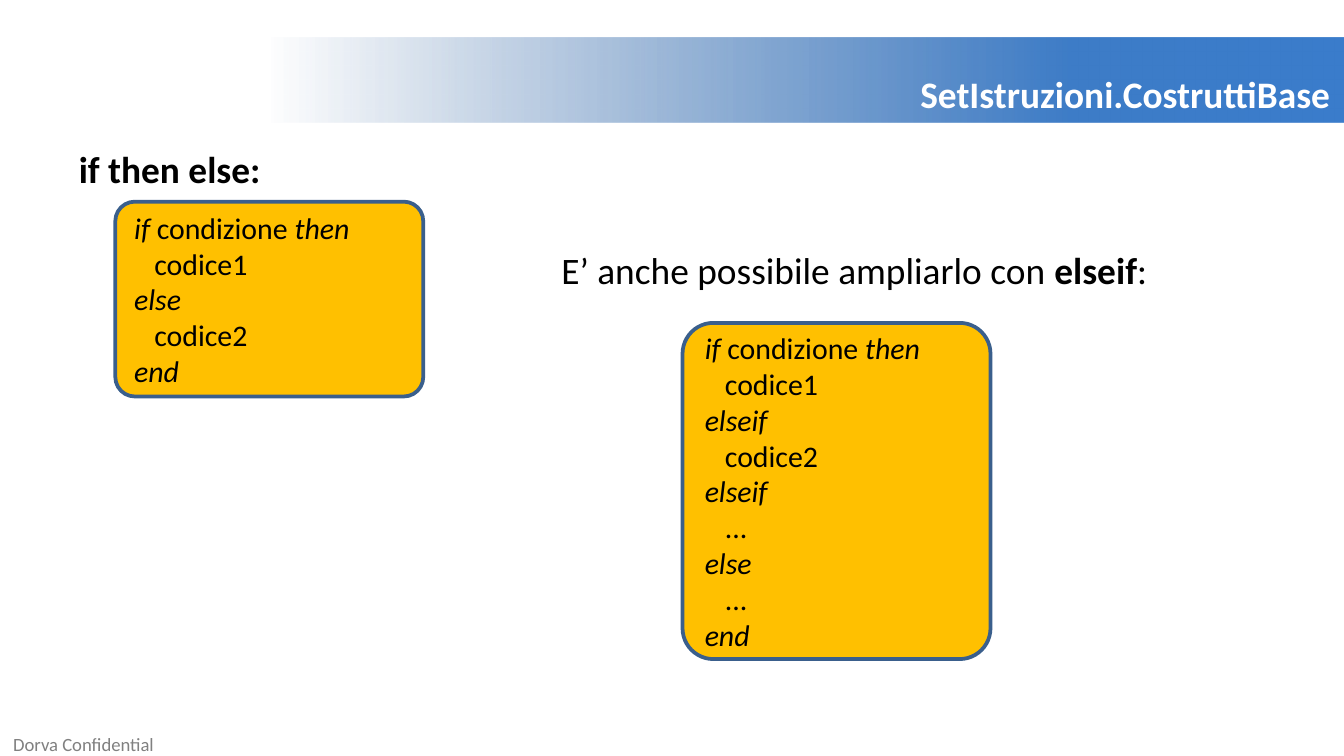
from pptx import Presentation
from pptx.dml.color import RGBColor
from pptx.enum.shapes import MSO_SHAPE
from pptx.enum.text import MSO_ANCHOR as Anchor, MSO_AUTO_SIZE as AutoSize, PP_ALIGN as Align
from pptx.oxml import parse_xml
from pptx.oxml.ns import nsdecls, qn
from pptx.util import Cm, Pt

COLORS = {"text": "000000", "title": "FFFFFF", "footer": "808080",
          "code": "FFC000", "border": "3A5F8C"}
BANNER_STOPS = [(20, "2F5F99", 0), (80, "3D7CC7", 100), (100, "3A7CCB", 100)]

TITLE = ("SetIstruzioni.CostruttiBase", "b")
FOOTER = ("Dorva Confidential", "")
HEADINGS = [
    ((1.24, 2.64, 8.64, 1.12), [("if then else:", "b")]),
    ((10.36, 4.55, 12.07, 1.12),
     [("E’ anche possibile ampliarlo con ", ""), ("elseif", "b"), (":", "")]),
]
CONDITION = [("if ", "i"), ("condizione ", ""), ("then", "i")]
FIRST, SECOND, MORE = [[("   " + body, "")] for body in ("codice1", "codice2", "...")]
ELSE, ELSEIF, END = [[(keyword, "i")] for keyword in ("else", "elseif", "end")]
CODE_BOXES = [
    ((2.18, 3.81, 5.82, 3.68), [CONDITION, FIRST, ELSE, SECOND, END]),
    ((12.9, 6.1, 5.82, 6.35),
     [CONDITION, FIRST, ELSEIF, SECOND, ELSEIF, MORE, ELSE, MORE, END]),
]


def write(frame, lines, size, color, align, anchor):
    """Fill a text frame with lines made of (text, style) runs."""
    frame.word_wrap = True
    frame.auto_size = AutoSize.NONE
    frame.vertical_anchor = anchor
    for index, line in enumerate(lines):
        paragraph = frame.add_paragraph() if index else frame.paragraphs[0]
        paragraph.alignment = align
        for text, style in line:
            run = paragraph.add_run()
            run.text = text
            font = run.font
            font.name, font.size = "Calibri", Pt(size)
            font.bold, font.italic = style == "b", style == "i"
            font.color.rgb = RGBColor.from_string(COLORS[color])


def paint_banner(banner):
    """Give the banner a horizontal gradient that fades out to the left."""
    banner.fill.gradient()
    banner.fill.gradient_angle = 0
    stops = "".join(
        f'<a:gs pos="{position * 1000}"><a:srgbClr val="{color}">'
        f'<a:alpha val="{opacity * 1000}"/></a:srgbClr></a:gs>'
        for position, color, opacity in BANNER_STOPS)
    gradient = banner.element.spPr.find(qn("a:gradFill"))
    gradient.replace(gradient.find(qn("a:gsLst")),
                     parse_xml(f'<a:gsLst {nsdecls("a")}>{stops}</a:gsLst>'))


def main():
    """Build the slide and save it."""
    deck = Presentation()
    deck.slide_width, deck.slide_height = Cm(25.4), Cm(14.28)
    slide = deck.slides.add_slide(deck.slide_layouts[5])

    banner = slide.shapes.title
    banner.left, banner.top = Cm(0), Cm(0.71)
    banner.width, banner.height = deck.slide_width, Cm(1.6)
    paint_banner(banner)
    write(banner.text_frame, [[TITLE]], 20, "title", Align.RIGHT, Anchor.BOTTOM)

    footer = slide.shapes.add_textbox(Cm(0.25), Cm(13.8), Cm(4.6), Cm(0.5)).text_frame
    footer.margin_left = footer.margin_right = footer.margin_top = footer.margin_bottom = 0
    write(footer, [[FOOTER]], 10, "footer", Align.LEFT, Anchor.MIDDLE)

    for place, heading in HEADINGS:
        label = slide.shapes.add_textbox(*map(Cm, place))
        write(label.text_frame, [heading], 20, "text", Align.JUSTIFY, Anchor.TOP)

    for place, code in CODE_BOXES:
        box = slide.shapes.add_shape(MSO_SHAPE.ROUNDED_RECTANGLE, *map(Cm, place))
        box.adjustments[0] = 0.1
        box.shadow.inherit = False
        box.fill.solid()
        box.fill.fore_color.rgb = RGBColor.from_string(COLORS["code"])
        box.line.color.rgb = RGBColor.from_string(COLORS["border"])
        box.line.width = Pt(2)
        write(box.text_frame, code, 16, "text", Align.JUSTIFY, Anchor.MIDDLE)

    deck.save("out.pptx")


if __name__ == "__main__":
    main()
